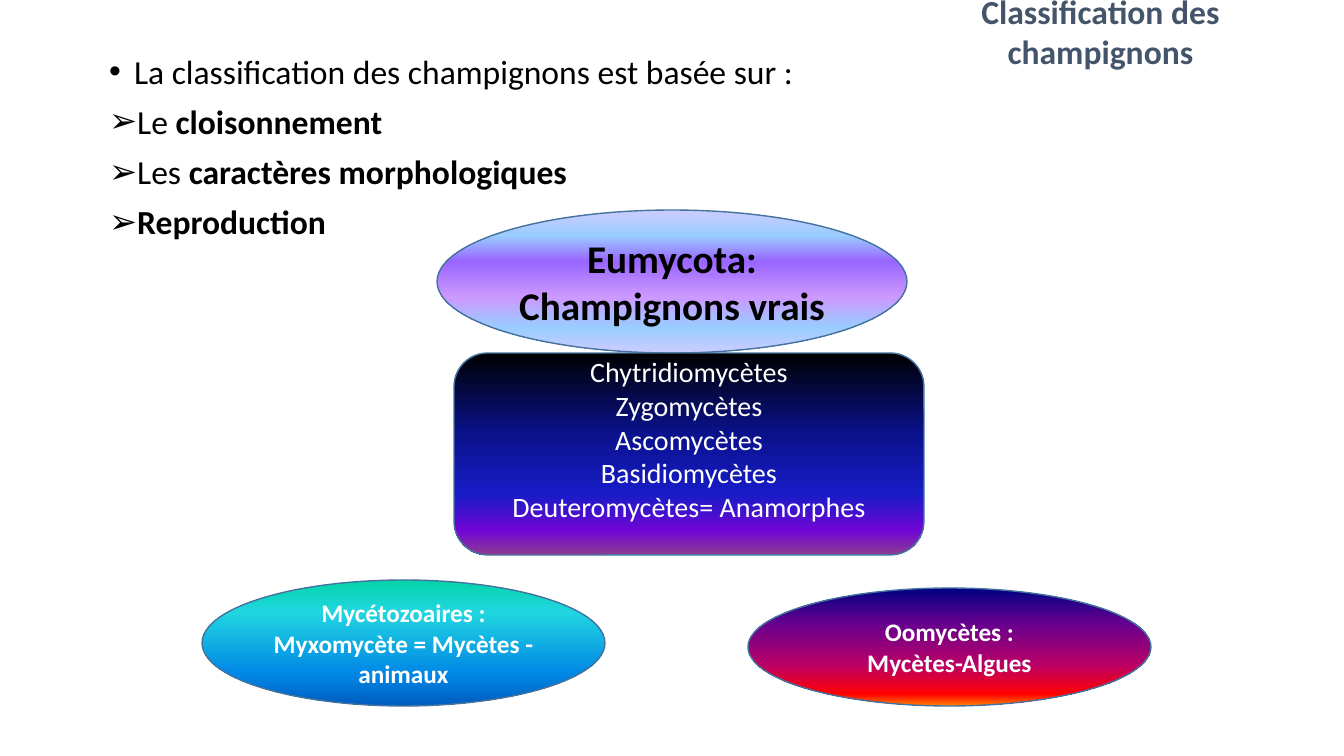
"""Build the slide on the classification of fungi."""
from lxml import etree
from pptx import Presentation
from pptx.dml.color import RGBColor
from pptx.enum.shapes import MSO_SHAPE
from pptx.enum.text import MSO_ANCHOR, MSO_AUTO_SIZE, PP_ALIGN
from pptx.oxml.ns import qn
from pptx.util import Emu, Pt

OVAL, ROUNDED = MSO_SHAPE.OVAL, MSO_SHAPE.ROUNDED_RECTANGLE
LEFT, CENTER = PP_ALIGN.LEFT, PP_ALIGN.CENTER
TOP, MIDDLE = MSO_ANCHOR.TOP, MSO_ANCHOR.MIDDLE
NO_AUTOFIT = MSO_AUTO_SIZE.NONE

EMU_PER_PX = 914400 / 100.8
SLIDE_SIZE = (1344, 756)
FONT = "Calibri"
TITLE_LAYOUT = 5
HANGING = 25
COLORS = {"title": "44546A", "dark": "000000", "light": "FFFFFF", "outline": "43739E"}

TITLE = "Classification des champignons"
TITLE_BOX = (884, 0, 433, 62)
CRITERIA_BOX = (99, 50, 932, 655)
CRITERIA = [
    [("La classification des champignons est basée sur :", False)],
    [("Le", False), (" cloisonnement", True)],
    [("Les ", False), ("caractères morphologiques", True)],
    [("Reproduction", True)],
]
CRITERIA_BULLETS = ["•", "➢", "➢", "➢"]

GROUPS = [
    {
        "kind": OVAL, "box": (437, 210, 470, 143),
        "lines": ["Eumycota: Champignons vrais"],
        "format": {"size": 28, "color": "dark", "bold": True},
        "stops": [(0, "CCCCFF"), (18, "99CCFF"), (36, "9966FF"),
                  (61, "CC99FF"), (82, "99CCFF"), (100, "CCCCFF")],
    },
    {
        "kind": OVAL, "box": (748, 588, 403, 118),
        "lines": ["Oomycètes :", "Mycètes-Algues"],
        "format": {"size": 18, "color": "light", "bold": True},
        "stops": [(0, "000082"), (30, "66008F"), (65, "BA0066"),
                  (90, "FF0000"), (100, "FF8200")],
    },
    {
        "kind": OVAL, "box": (202, 580, 403, 126),
        "lines": ["Mycétozoaires : Myxomycète = Mycètes - animaux"],
        "format": {"size": 18, "color": "light", "bold": True},
        "stops": [(0, "03D4A8"), (25, "21D6E0"), (75, "0087E6"), (100, "005CBF")],
    },
    {
        "kind": ROUNDED, "box": (454, 353, 470, 202),
        "lines": ["Chytridiomycètes", "Zygomycètes", "Ascomycètes",
                  "Basidiomycètes", "Deuteromycètes= Anamorphes"],
        "format": {"size": 20, "color": "light", "bottom_inset": 35},
        "stops": [(0, "000000"), (40, "0A128C"), (70, "181CC7"),
                  (88, "7005D4"), (100, "8C3D91")],
    },
]


def px(length):
    """Turn pixels into EMU."""
    return Emu(round(length * EMU_PER_PX))


def place(box):
    """Turn a pixel box into EMU."""
    return [px(length) for length in box]


def add_bullet(paragraph, symbol):
    """Give a paragraph a hanging bullet."""
    properties = paragraph._p.get_or_add_pPr()
    properties.set("marL", str(px(HANGING)))
    properties.set("indent", str(-px(HANGING)))
    etree.SubElement(properties, qn("a:buFont"), typeface="Arial")
    etree.SubElement(properties, qn("a:buChar"), char=symbol)


def write_text(shape, lines, size, color, bold=False, align=CENTER, anchor=MIDDLE,
               spacing=1.0, before=0, bullets=(), bottom_inset=5):
    """Fill a shape with lines, each a string or a list of (text, bold) runs."""
    frame = shape.text_frame
    frame.word_wrap = True
    frame.auto_size = NO_AUTOFIT
    frame.vertical_anchor = anchor
    frame.margin_left = frame.margin_right = px(10)
    frame.margin_top, frame.margin_bottom = px(5), px(bottom_inset)
    for index, line in enumerate(lines):
        paragraph = frame.add_paragraph() if index else frame.paragraphs[0]
        paragraph.alignment = align
        paragraph.line_spacing = spacing
        paragraph.space_before = Pt(before)
        if bullets:
            add_bullet(paragraph, bullets[index])
        runs = [(line, bold)] if isinstance(line, str) else line
        for text, run_bold in runs:
            run = paragraph.add_run()
            run.text = text
            run.font.name = FONT
            run.font.size = Pt(size)
            run.font.bold = run_bold
            run.font.color.rgb = RGBColor.from_string(COLORS[color])


def fill_gradient(shape, stops):
    """Fill a shape from top to bottom with (percent, colour) stops."""
    shape.fill.gradient()
    shape.fill.gradient_angle = 270
    stop_list = shape._element.spPr.find(qn("a:gradFill")).find(qn("a:gsLst"))
    for old_stop in list(stop_list):
        stop_list.remove(old_stop)
    for percent, color in stops:
        stop = etree.SubElement(stop_list, qn("a:gs"), pos=str(percent * 1000))
        etree.SubElement(stop, qn("a:srgbClr"), val=color)


def add_group(slide, group):
    """Add one gradient shape naming a group of fungi."""
    shape = slide.shapes.add_shape(group["kind"], *place(group["box"]))
    shape.shadow.inherit = False
    fill_gradient(shape, group["stops"])
    shape.line.color.rgb = RGBColor.from_string(COLORS["outline"])
    shape.line.width = Pt(1)
    write_text(shape, group["lines"], **group["format"])


def main():
    """Build and save the presentation."""
    presentation = Presentation()
    presentation.slide_width, presentation.slide_height = place(SLIDE_SIZE)
    slide = presentation.slides.add_slide(presentation.slide_layouts[TITLE_LAYOUT])

    title = slide.shapes.title
    title.left, title.top, title.width, title.height = place(TITLE_BOX)
    write_text(title, [TITLE], size=24, color="title", bold=True)

    criteria = slide.shapes.add_textbox(*place(CRITERIA_BOX))
    write_text(criteria, CRITERIA, size=24, color="dark", align=LEFT, anchor=TOP,
               spacing=0.9, before=10, bullets=CRITERIA_BULLETS)

    for group in GROUPS:
        add_group(slide, group)
    presentation.save("out.pptx")


if __name__ == "__main__":
    main()
